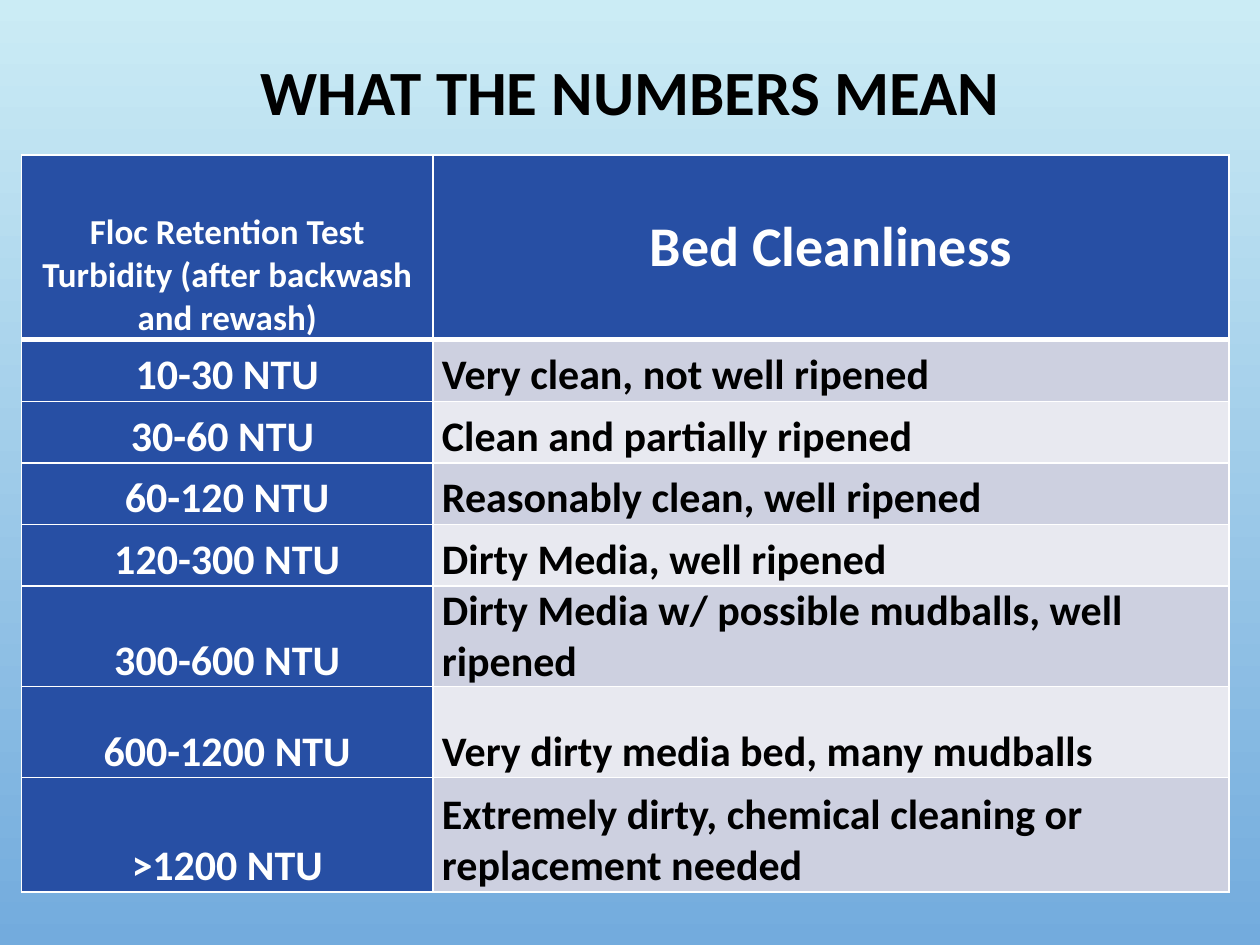
from lxml import etree
from pptx import Presentation
from pptx.dml.color import RGBColor
from pptx.enum.text import MSO_ANCHOR, PP_ALIGN
from pptx.oxml.ns import qn
from pptx.util import Cm, Pt

LEFT, CENTER = PP_ALIGN.LEFT, PP_ALIGN.CENTER
MIDDLE, BOTTOM = MSO_ANCHOR.MIDDLE, MSO_ANCHOR.BOTTOM

SKY = RGBColor(0xCB, 0xEC, 0xF5)
DEEP_SKY = RGBColor(0x73, 0xAB, 0xDD)
BLUE = RGBColor(0x27, 0x4F, 0xA4)
BANDS = RGBColor(0xCD, 0xD0, 0xE0), RGBColor(0xE8, 0xE9, 0xF0)
BLACK = RGBColor(0, 0, 0)
WHITE = RGBColor(0xFF, 0xFF, 0xFF)

FONT = "Calibri"
COL_WIDTHS = 8.3, 16.05
HEADER_HEIGHT = 3.73
HEADERS = (
    ("Floc Retention Test Turbidity (after backwash and rewash)", 20, BOTTOM),
    ("Bed Cleanliness", 32, MIDDLE),
)
LEVELS = (
    ("10-30 NTU", "Very clean, not well ripened", 1.24),
    ("30-60 NTU ", "Clean and partially ripened", 1.24),
    ("60-120 NTU", "Reasonably clean, well ripened", 1.24),
    ("120-300 NTU", "Dirty Media, well ripened", 1.24),
    ("300-600 NTU", "Dirty Media w/ possible mudballs, well ripened", 1.83),
    ("600-1200 NTU", "Very dirty media bed, many mudballs", 1.83),
    (">1200 NTU", "Extremely dirty, chemical cleaning or replacement needed", 2.31),
)


def set_background(s):
    fill = s.background.fill
    fill.gradient()
    fill.gradient_angle = 270
    for stop, color, position in zip(fill.gradient_stops, (SKY, DEEP_SKY), (0, 1)):
        stop.color.rgb = color
        stop.position = position


def write(tf, text, size, color, align):
    p = tf.paragraphs[0]
    p.text = text
    p.alignment = align
    p.font.name = FONT
    p.font.size = Pt(size)
    p.font.bold = True
    p.font.color.rgb = color
    return p


def add_title(s):
    sp = s.shapes.add_textbox(Cm(1.9), Cm(0.64), Cm(21.6), Cm(2.54))
    tf = sp.text_frame
    tf.word_wrap = True
    tf.vertical_anchor = MIDDLE
    p = write(tf, "WHAT THE NUMBERS MEAN", 36, BLACK, CENTER)
    p.line_spacing = 0.9


def set_borders(cell, top=1, bottom=1):
    tcPr = cell._tc.get_or_add_tcPr()
    for side, width in (("L", 1), ("R", 1), ("T", top), ("B", bottom)):
        ln = etree.SubElement(tcPr, qn(f"a:ln{side}"), w=str(Pt(width)))
        fill = etree.SubElement(ln, qn("a:solidFill"))
        etree.SubElement(fill, qn("a:srgbClr"), val=str(WHITE))


def fill_cell(cell, text, size, color, back, align=CENTER, anchor=BOTTOM, top=1, bottom=1):
    set_borders(cell, top, bottom)
    cell.fill.solid()
    cell.fill.fore_color.rgb = back
    cell.margin_left = cell.margin_right = Cm(0.18)
    cell.margin_top = cell.margin_bottom = 0
    cell.vertical_anchor = anchor
    write(cell.text_frame, text, size, color, align)


def add_level_table(s):
    heights = [HEADER_HEIGHT] + [height for _, _, height in LEVELS]
    table = s.shapes.add_table(
        len(heights), len(COL_WIDTHS), Cm(0.43), Cm(3.12),
        Cm(sum(COL_WIDTHS)), Cm(sum(heights)),
    ).table
    for column, width in zip(table.columns, COL_WIDTHS):
        column.width = Cm(width)
    for row, height in zip(table.rows, heights):
        row.height = Cm(height)
    for c, (text, size, anchor) in enumerate(HEADERS):
        fill_cell(table.cell(0, c), text, size, WHITE, BLUE, anchor=anchor, bottom=3)
    for r, (turbidity, cleanliness, _) in enumerate(LEVELS, 1):
        top = 3 if r == 1 else 1
        band = BANDS[(r - 1) % 2]
        fill_cell(table.cell(r, 0), turbidity, 24, WHITE, BLUE, top=top)
        fill_cell(table.cell(r, 1), cleanliness, 24, BLACK, band, LEFT, top=top)


def main():
    prs = Presentation()
    prs.slide_width, prs.slide_height = Cm(25.4), Cm(19.05)
    s = prs.slides.add_slide(prs.slide_layouts[6])
    set_background(s)
    add_title(s)
    add_level_table(s)
    prs.save("out.pptx")


if __name__ == "__main__":
    main()
